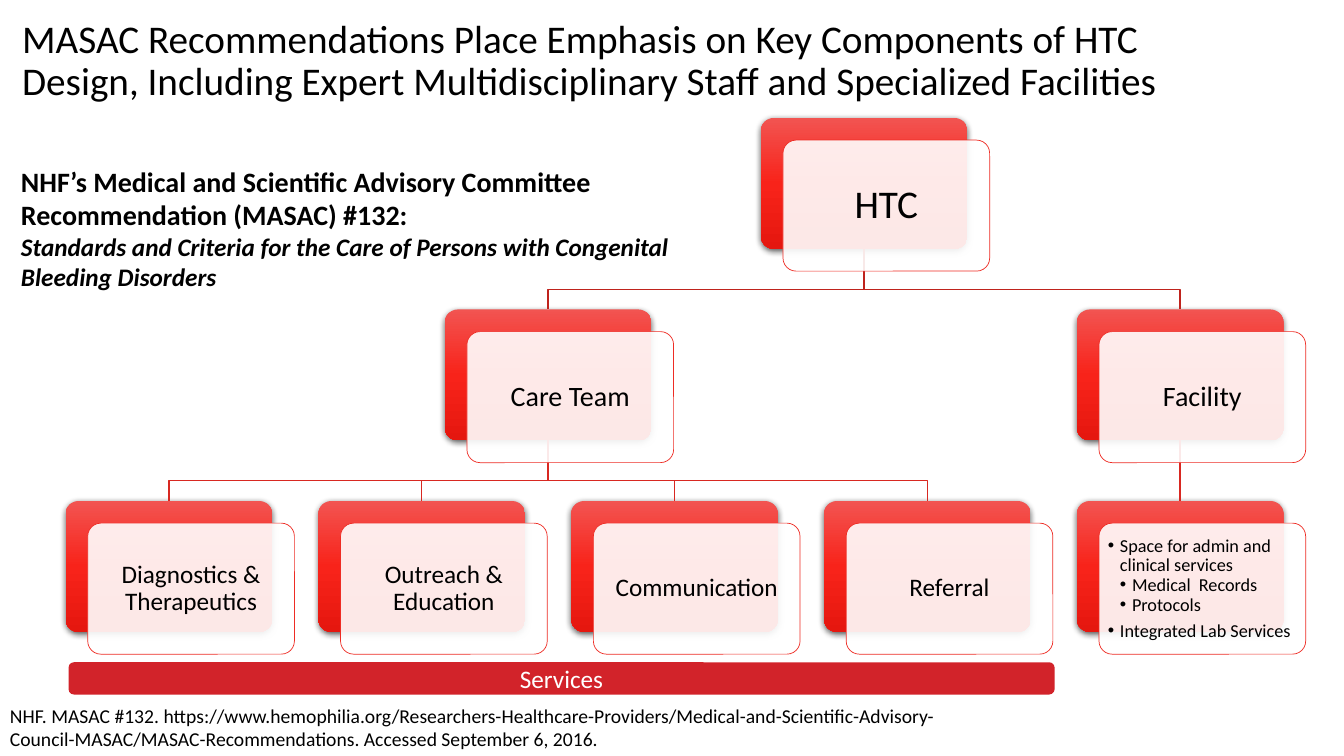
from copy import deepcopy

from lxml.etree import SubElement
from pptx import Presentation
from pptx.dml.color import RGBColor
from pptx.enum.shapes import MSO_CONNECTOR, MSO_SHAPE
from pptx.enum.text import MSO_ANCHOR, PP_ALIGN
from pptx.oxml.ns import qn
from pptx.util import Inches, Pt

TITLE = ("MASAC Recommendations Place Emphasis on Key Components of HTC Design, "
         "Including Expert Multidisciplinary Staff and Specialized Facilities")
INTRO = [
    ("NHF’s Medical and Scientific Advisory Committee Recommendation (MASAC) #132:", 20, False),
    ("Standards and Criteria for the Care of Persons with Congenital Bleeding Disorders", 18, True),
]
SOURCE = ("NHF. MASAC #132. https://www.hemophilia.org/Researchers-Healthcare-Providers/"
          "Medical-and-Scientific-Advisory-Council-MASAC/MASAC-Recommendations. "
          "Accessed September 6, 2016.")
FACILITY_ITEMS = [
    ("Space for admin and clinical services", 0, 0),
    ("Medical  Records", 1, 0),
    ("Protocols", 1, 4.5),
    ("Integrated Lab Services", 0, 4.5),
]
# name: (text, column, row, parent)
NODES = {
    "htc": ("HTC", 2.75, 0, None),
    "team": ("Care Team", 1.5, 1, "htc"),
    "facility": ("Facility", 4, 1, "htc"),
    "diagnostics": ("Diagnostics & Therapeutics", 0, 2, "team"),
    "outreach": ("Outreach & Education", 1, 2, "team"),
    "communication": ("Communication", 2, 2, "team"),
    "referral": ("Referral", 3, 2, "team"),
    "space": (FACILITY_ITEMS, 4, 2, "facility"),
}
ROW_STYLE = [(28, 0.12), (20, 0.08), (18, 0.07)]

BLACK = RGBColor(0, 0, 0)
WHITE = RGBColor(0xFF, 0xFF, 0xFF)
CARD_REDS = [RGBColor(0xF2, 0x54, 0x51), RGBColor(0xF8, 0x23, 0x1A), RGBColor(0xE5, 0x17, 0x0F)]
OUTLINE_RED = RGBColor(0xEE, 0x2C, 0x24)
LINK_REDS = [RGBColor(0xBF, 0x23, 0x1D), RGBColor(0xD8, 0x28, 0x21)]
BAR_RED = RGBColor(0xD2, 0x23, 0x2A)
FONT = "Calibri"

LEFT, TOP = 0.65, 1.17
COL_STEP, ROW_STEP = (10.68 - LEFT) / 4, 1.9
CARD_W, CARD_H = 2.05, 1.3
OFFSET = 0.22
BEND = 0.4


def card_corner(name):
    _, col, row, _ = NODES[name]
    return LEFT + col * COL_STEP, TOP + row * ROW_STEP


def style(p, size, color=BLACK, bold=None, italic=None):
    for r in p.runs:
        f = r.font
        f.name, f.size, f.bold, f.italic = FONT, Pt(size), bold, italic
        f.color.rgb = color


def rounded(shapes, x, y, w, h, adj=None):
    sp = shapes.add_shape(MSO_SHAPE.ROUNDED_RECTANGLE, Inches(x), Inches(y), Inches(w), Inches(h))
    sp.shadow.inherit = False
    sp.line.fill.background()
    if adj:
        sp.adjustments[0] = adj
    return sp


def textbox(shapes, x, y, w, h):
    tf = shapes.add_textbox(Inches(x), Inches(y), Inches(w), Inches(h)).text_frame
    tf.word_wrap = True
    return tf


def back_card(shapes, name):
    sp = rounded(shapes, *card_corner(name), CARD_W, CARD_H, 0.1)
    sp.fill.gradient()
    sp.fill.gradient_angle = 270
    stops = sp._element.spPr.find(qn("a:gradFill")).find(qn("a:gsLst"))
    stops.insert(1, deepcopy(stops[0]))
    for i, (stop, color) in enumerate(zip(sp.fill.gradient_stops, CARD_REDS)):
        stop.position = i / 2
        stop.color.rgb = color
    effects = sp._element.spPr.find(qn("a:effectLst"))
    shadow = SubElement(effects, qn("a:outerShdw"), blurRad=str(Pt(4.5)), dist=str(Pt(1.5)),
                        dir="5400000", algn="ctr", rotWithShape="0")
    black = SubElement(shadow, qn("a:srgbClr"), val=str(BLACK))
    SubElement(black, qn("a:alpha"), val="63000")
    return sp


def link(shapes, backs, parent, child):
    x1, y1 = card_corner(parent)
    x2, y2 = card_corner(child)
    x1, x2, y1 = x1 + CARD_W / 2, x2 + CARD_W / 2, y1 + CARD_H
    if x1 == x2:
        sp = shapes.add_connector(MSO_CONNECTOR.STRAIGHT, Inches(x1), Inches(y1), Inches(x2), Inches(y2))
        sp.begin_connect(backs[parent], 2)
        sp.end_connect(backs[child], 0)
        SubElement(sp._element.spPr, qn("a:effectLst"))
    else:
        points = [(x1, y1 + BEND), (x2, y1 + BEND), (x2, y2)]
        path = shapes.build_freeform(Inches(x1), Inches(y1))
        path.add_line_segments([(Inches(x), Inches(y)) for x, y in points], close=False)
        sp = path.convert_to_shape()
        sp.fill.background()
        sp.shadow.inherit = False
    sp.line.color.rgb = LINK_REDS[NODES[parent][2]]
    sp.line.width = Pt(1)


def bulleted(tf, items):
    for i, (text, level, after) in enumerate(items):
        p = tf.paragraphs[0] if i == 0 else tf.add_paragraph()
        p.text = text
        pPr = p._p.get_or_add_pPr()
        pPr.set("marL", str(Inches(0.12 * (level + 1))))
        pPr.set("indent", str(Inches(-0.12)))
        SubElement(pPr, qn("a:buFont"), typeface="Arial")
        SubElement(pPr, qn("a:buChar"), char="•")
        p.alignment = PP_ALIGN.LEFT
        p.line_spacing = 0.9
        p.space_after = Pt(after)
        style(p, 13)


def front_card(shapes, name):
    text, _, row, _ = NODES[name]
    size, inset = ROW_STYLE[row]
    x, y = card_corner(name)
    sp = rounded(shapes, x + OFFSET, y + OFFSET, CARD_W, CARD_H, 0.1)
    sp.fill.solid()
    sp.fill.fore_color.rgb = WHITE
    white = sp._element.spPr.find(qn("a:solidFill"))[0]
    SubElement(white, qn("a:alpha"), val="90000")
    sp.line.color.rgb = OUTLINE_RED
    sp.line.width = Pt(0.5)
    tf = sp.text_frame
    tf.word_wrap = True
    tf.vertical_anchor = MSO_ANCHOR.MIDDLE
    if text is FACILITY_ITEMS:
        inset = 0.05
        bulleted(tf, text)
    else:
        tf.text = text
        p = tf.paragraphs[0]
        p.alignment = PP_ALIGN.CENTER
        p.line_spacing = 0.9
        p.space_after = Pt(size * 0.35)
        style(p, size)
    tf.margin_left = tf.margin_right = tf.margin_top = tf.margin_bottom = Inches(inset)


def main():
    prs = Presentation()
    prs.slide_width, prs.slide_height = Inches(13.33), Inches(7.5)
    s = prs.slides.add_slide(prs.slide_layouts[5])
    shapes = s.shapes

    title = shapes.title
    title.left, title.top, title.width, title.height = map(Inches, (0.12, 0.11, 11.83, 1.01))
    tf = title.text_frame
    tf.text = TITLE
    tf.word_wrap = True
    tf.vertical_anchor = MSO_ANCHOR.MIDDLE
    p = tf.paragraphs[0]
    p.alignment = PP_ALIGN.LEFT
    p.line_spacing = 0.9
    style(p, 28)

    backs = {name: back_card(shapes, name) for name in NODES}
    for name, (_, _, _, parent) in NODES.items():
        if parent:
            link(shapes, backs, parent, name)
    for name in NODES:
        front_card(shapes, name)

    tf = textbox(shapes, 0, 6.93, 9.6, 0.57)
    tf.text = SOURCE
    style(tf.paragraphs[0], 14)

    bar = rounded(shapes, 0.68, 6.57, 9.78, 0.32)
    bar.fill.solid()
    bar.fill.fore_color.rgb = BAR_RED
    tf = bar.text_frame
    tf.text = "Services"
    tf.vertical_anchor = MSO_ANCHOR.MIDDLE
    tf.paragraphs[0].alignment = PP_ALIGN.CENTER
    style(tf.paragraphs[0], 18, WHITE)

    tf = textbox(shapes, 0.11, 1.58, 6.94, 1.38)
    for i, (text, size, italic) in enumerate(INTRO):
        p = tf.paragraphs[0] if i == 0 else tf.add_paragraph()
        p.text = text
        style(p, size, bold=True, italic=italic)

    prs.save("out.pptx")


if __name__ == "__main__":
    main()
